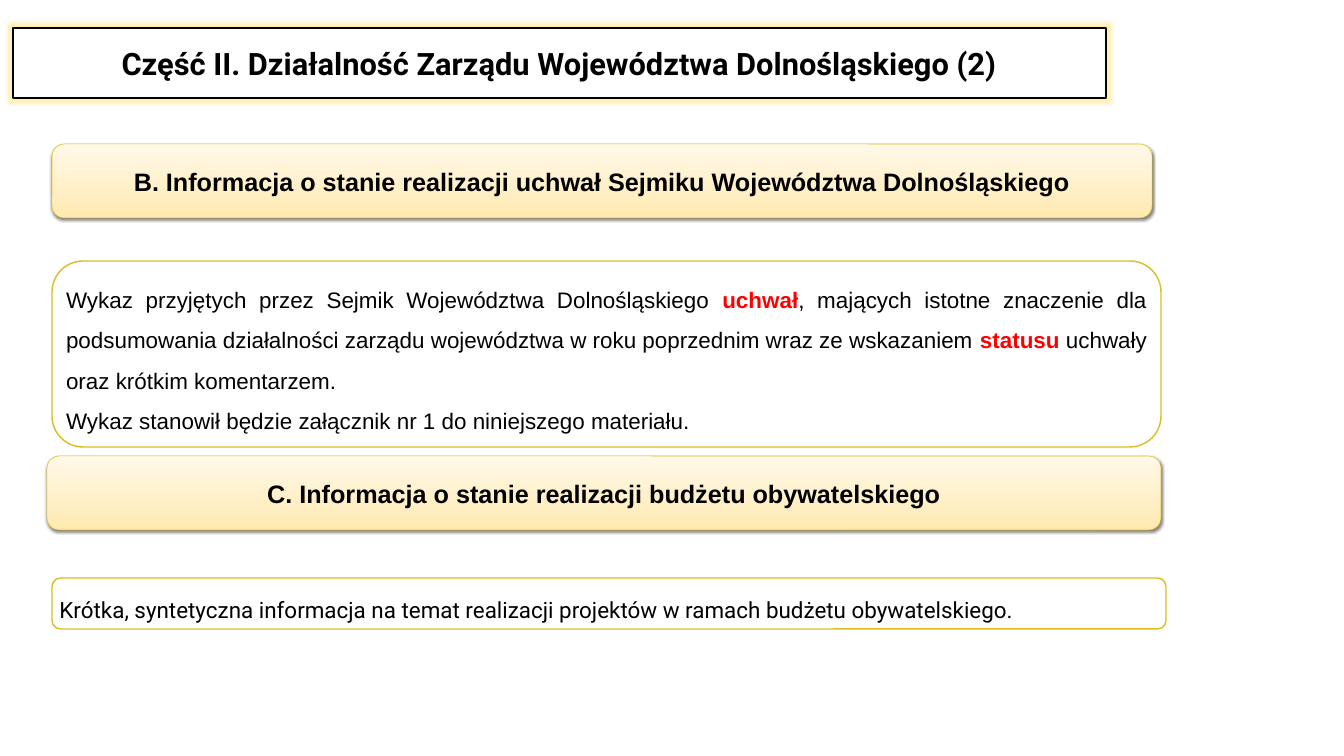
"""Builds the slide on the work of the regional board, sections B and C."""
from copy import deepcopy

from pptx import Presentation
from pptx.dml.color import RGBColor
from pptx.enum.shapes import MSO_SHAPE
from pptx.enum.text import MSO_ANCHOR, MSO_AUTO_SIZE, PP_ALIGN
from pptx.oxml import parse_xml
from pptx.oxml.ns import nsdecls, qn
from pptx.util import Pt

PX = 914400 / 50.4
BLACK, RED, GOLD = "000000", "FF0000", "DCBD23"
HEADING = ("Część II. Działalność Zarządu Województwa Dolnośląskiego (2)", (13, 28, 1093, 70))
BANNERS = [
    ("B. Informacja o stanie realizacji uchwał Sejmiku Województwa Dolnośląskiego",
     (52, 144, 1100, 74)),
    ("C. Informacja o stanie realizacji budżetu obywatelskiego", (47, 456, 1114, 74)),
]
DETAILS = [
    ([[("Wykaz przyjętych przez Sejmik Województwa Dolnośląskiego ", False),
       ("uchwał", True),
       (", mających istotne znaczenie dla podsumowania działalności zarządu województwa "
        "w roku poprzednim wraz ze wskazaniem ", False),
       ("statusu", True),
       (" uchwały oraz krótkim komentarzem.", False)],
      [("Wykaz stanowił będzie załącznik nr 1 do niniejszego materiału.", False)]],
     "Arial", (52, 261, 1109, 186)),
    ([[("Krótka, syntetyczna informacja na temat realizacji projektów w ramach budżetu "
        "obywatelskiego.", False)]],
     "Roboto", (52, 578, 1114, 51)),
]
BANNER_STOPS = [(0, "FFE9AD"), (0.35, "FFEFC5"), (1, "FFF9E9")]
GLOW = '<a:glow rad="139700"><a:srgbClr val="FFD93B"><a:alpha val="40000"/></a:srgbClr></a:glow>'
SHADOW = ('<a:outerShdw blurRad="50800" dist="25400" dir="5400000" rotWithShape="0">'
          '<a:srgbClr val="000000"><a:alpha val="50000"/></a:srgbClr></a:outerShdw>')


def color(code):
    """Return the colour for a hex string."""
    return RGBColor.from_string(code)


def emu(px):
    """Turn px into EMU."""
    return round(px * PX)


def write(shape, paragraphs, font="Arial", size=32, bold=False, align=PP_ALIGN.CENTER,
          anchor=MSO_ANCHOR.MIDDLE, spacing=1.0, fit=MSO_AUTO_SIZE.NONE):
    """Fill a shape with paragraphs of (text, emphasised) runs."""
    frame = shape.text_frame
    frame.word_wrap, frame.auto_size, frame.vertical_anchor = True, fit, anchor
    for index, runs in enumerate(paragraphs):
        paragraph = frame.add_paragraph() if index else frame.paragraphs[0]
        paragraph.alignment, paragraph.line_spacing = align, spacing
        for text, emphasised in runs:
            run = paragraph.add_run()
            run.text = text
            run.font.name, run.font.size = font, Pt(size)
            run.font.bold = bold or emphasised
            run.font.color.rgb = color(RED if emphasised else BLACK)


def outline(shape, line, width, fill="FFFFFF"):
    """Give a shape its plain fill and line."""
    shape.fill.solid()
    shape.fill.fore_color.rgb = color(fill)
    shape.line.color.rgb = color(line)
    shape.line.width = Pt(width)


def add_effect(shape, effect):
    """Append a glow or shadow to a shape."""
    shape._element.spPr.append(
        parse_xml(f'<a:effectLst {nsdecls("a")}>{effect}</a:effectLst>'))


def add_box(slide, place, line, width):
    """Add a rounded box without shadow."""
    box = slide.shapes.add_shape(MSO_SHAPE.ROUNDED_RECTANGLE, *map(emu, place))
    outline(box, line, width)
    return box


def add_heading(slide):
    """Turn the title placeholder into the glowing heading box."""
    text, place = HEADING
    heading = slide.shapes.title
    heading.left, heading.top, heading.width, heading.height = map(emu, place)
    properties = heading._element.spPr
    properties.insert(1, parse_xml(
        f'<a:prstGeom {nsdecls("a")} prst="roundRect"><a:avLst/></a:prstGeom>'))
    outline(heading, BLACK, 2)
    add_effect(heading, GLOW)
    write(heading, [[(text, False)]], font="Roboto", size=44, bold=True)


def add_banner(slide, text, place):
    """Add a section banner with a gradient and a shadow."""
    banner = add_box(slide, place, "DCBC1E", 0.75)
    banner.fill.gradient()
    banner.fill.gradient_angle = 90
    stops = banner._element.spPr.find(f'.//{qn("a:gsLst")}')
    stops.append(deepcopy(stops[0]))
    for stop, (position, code) in zip(banner.fill.gradient_stops, BANNER_STOPS):
        stop.position, stop.color.rgb = position, color(code)
    add_effect(banner, SHADOW)
    write(banner, [[(text, False)]], size=36, bold=True)


def add_detail(slide, paragraphs, font, place):
    """Add a box with justified text."""
    detail = add_box(slide, place, GOLD, 2)
    detail.shadow.inherit = False
    write(detail, paragraphs, font=font, align=PP_ALIGN.JUSTIFY, anchor=MSO_ANCHOR.TOP,
          spacing=1.5, fit=MSO_AUTO_SIZE.SHAPE_TO_FIT_TEXT)


def main():
    """Build and save the slide."""
    deck = Presentation()
    deck.slide_width, deck.slide_height = emu(1344), emu(756)
    slide = deck.slides.add_slide(deck.slide_layouts[5])
    add_heading(slide)
    for detail in DETAILS:
        add_detail(slide, *detail)
    for banner in BANNERS:
        add_banner(slide, *banner)
    deck.save("out.pptx")


if __name__ == "__main__":
    main()
